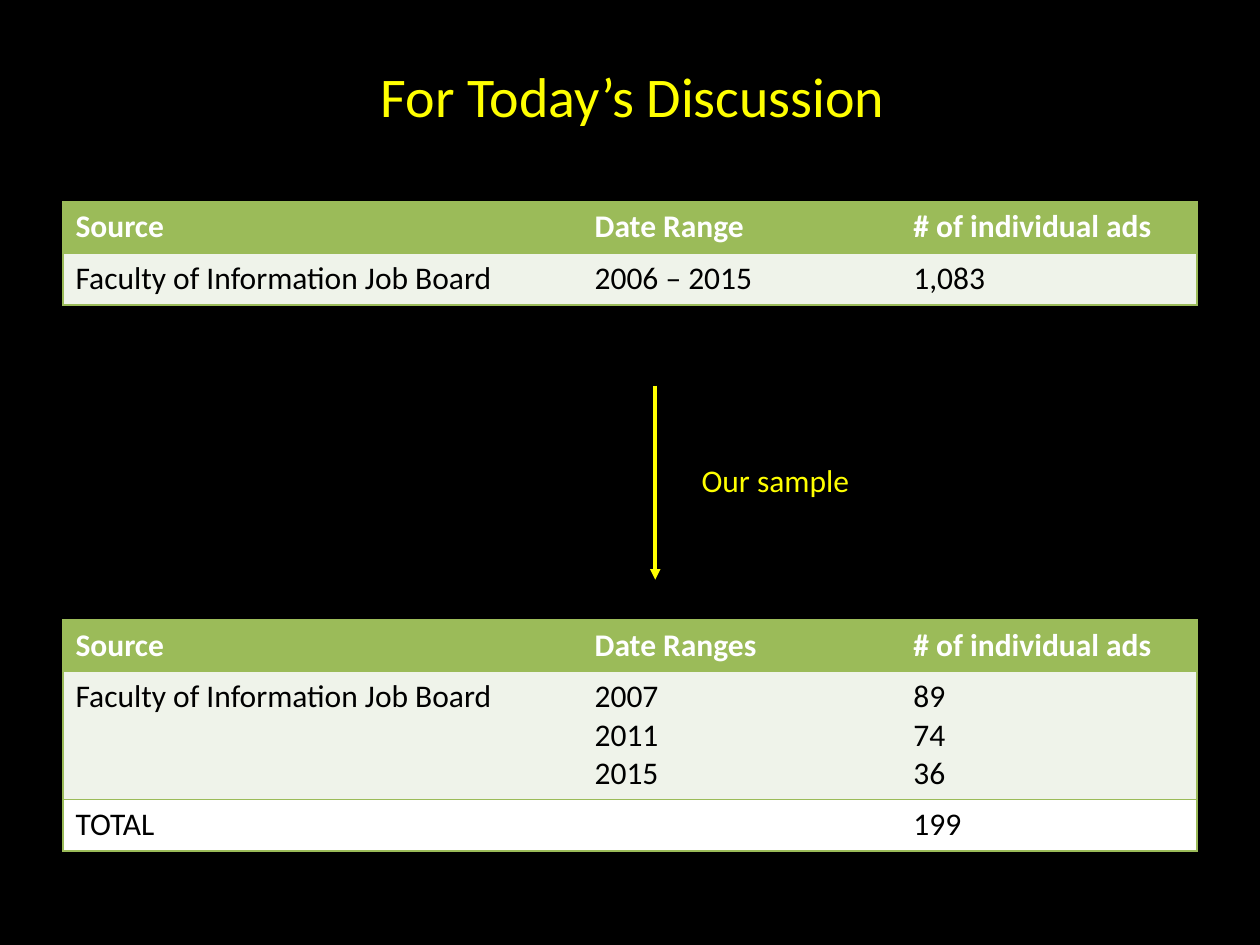
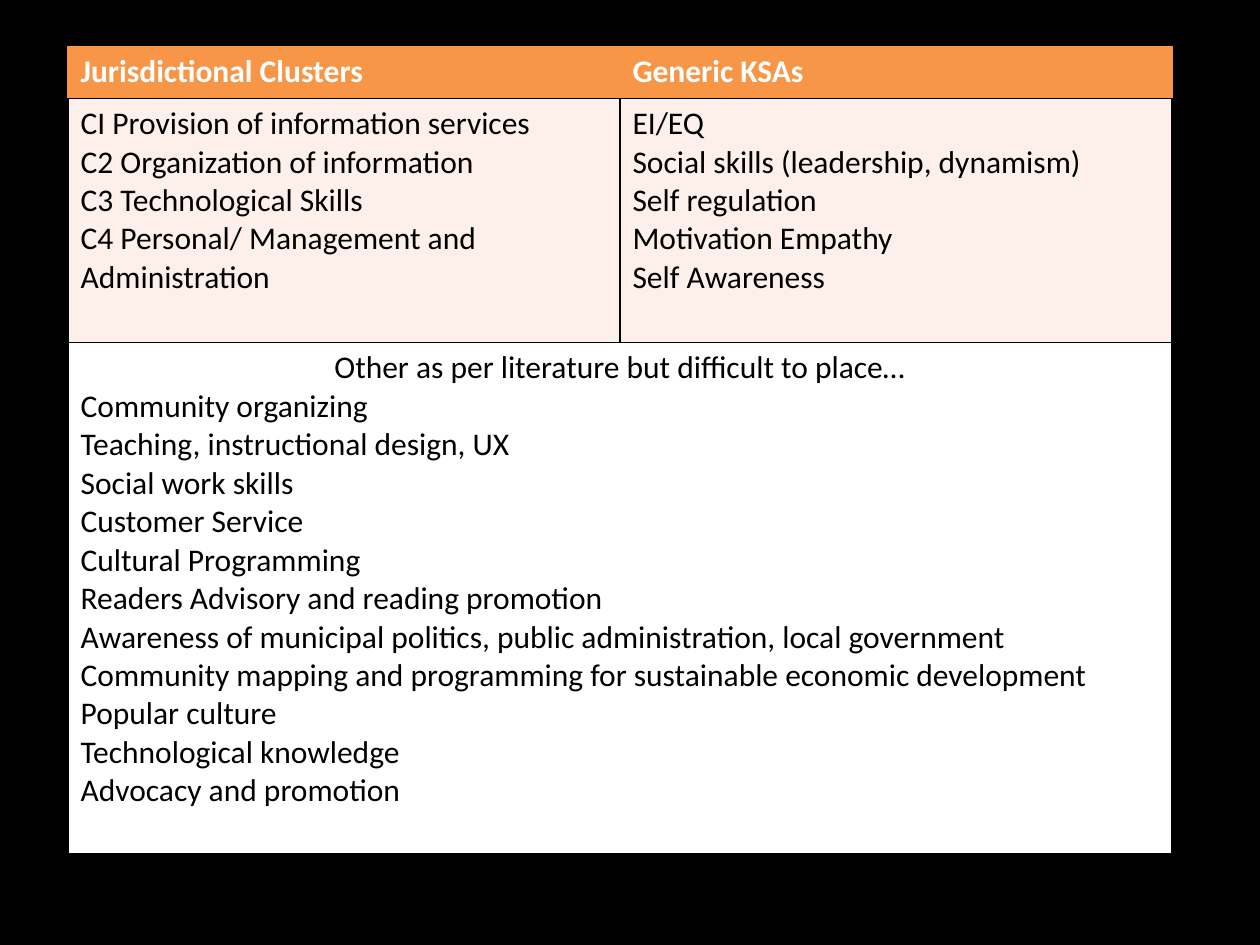
from collections import namedtuple

from lxml.etree import SubElement
from pptx import Presentation
from pptx.dml.color import RGBColor
from pptx.enum.shapes import MSO_CONNECTOR as Connector
from pptx.enum.text import MSO_ANCHOR as Anchor, MSO_AUTO_SIZE as AutoSize, PP_ALIGN as Align
from pptx.oxml.ns import qn
from pptx.util import Inches, Pt

COLORS = {
    "background": "000000",
    "accent": "FFFF00",
    "white": "FFFFFF",
    "black": "000000",
    "green": "9BBB59",
    "pale_green": "EFF3EA",
    "orange": "F79646",
    "pale_orange": "FDEFE9",
}
FONT = "Calibri"
BODY_SIZE = 18
TITLE_SIZE = 32
TITLE_ONLY, BLANK = 5, 6

Box = namedtuple("Box", "left top width height")

SOURCE_COLUMNS = [4.12, 2.53, 2.35]
ALL_ADS = [
    ["Source", "Date Range", "# of individual ads"],
    ["Faculty of Information Job Board", "2006 – 2015", "1,083"],
]
SAMPLE_ADS = [
    ["Source", "Date Ranges", "# of individual ads"],
    ["Faculty of Information Job Board", "2007\n2011\n2015", "89\n74\n36"],
    ["TOTAL", "", "199"],
]
CLUSTERS = [
    "CI Provision of information services",
    "C2 Organization of information",
    "C3 Technological Skills",
    "C4 Personal/ Management and Administration",
]
GENERIC_SKILLS = [
    "EI/EQ",
    "Social skills (leadership, dynamism)",
    "Self regulation",
    "Motivation Empathy",
    "Self Awareness",
]
OTHER_SKILLS = [
    "Other as per literature but difficult to place…",
    "Community organizing",
    "Teaching, instructional design, UX",
    "Social work skills",
    "Customer Service",
    "Cultural Programming",
    "Readers Advisory and reading promotion",
    "Awareness of municipal politics, public administration, local government",
    "Community mapping and programming for sustainable economic development",
    "Popular culture",
    "Technological knowledge",
    "Advocacy and promotion",
]
SKILLS = [
    ["Jurisdictional Clusters", "Generic KSAs"],
    ["\n".join(CLUSTERS), "\n".join(GENERIC_SKILLS)],
    ["\n".join(OTHER_SKILLS), ""],
]


def rgb(name):
    return RGBColor.from_string(COLORS[name])


def write_text(text_frame, text, color, size=BODY_SIZE, bold=False):
    text_frame.text = text
    font_format = {"name": FONT, "size": Pt(size), "bold": bold}
    for paragraph in text_frame.paragraphs:
        for run in paragraph.runs:
            for attribute, value in font_format.items():
                setattr(run.font, attribute, value)
            run.font.color.rgb = rgb(color)


def set_frame(text_frame):
    frame_format = {
        "word_wrap": True,
        "auto_size": AutoSize.NONE,
        "vertical_anchor": Anchor.TOP,
    }
    for attribute, value in frame_format.items():
        setattr(text_frame, attribute, value)


def set_borders(cell, borders):
    """Draw the sides L, R, T and B in the named colours; None hides a side."""
    properties = cell._tc.get_or_add_tcPr()
    for side in "LRTB":
        line = SubElement(properties, qn(f"a:ln{side}"), w=str(Pt(1)))
        color = borders[side]
        if color:
            fill = SubElement(line, qn("a:solidFill"))
            SubElement(fill, qn("a:srgbClr"), val=COLORS[color])
        else:
            SubElement(line, qn("a:noFill"))


def source_borders(row, column, row_count, column_count):
    """Green rules across, and green sides on the outside only."""
    return {
        "L": "green" if column == 0 else None,
        "R": "green" if column == column_count - 1 else None,
        "T": "green",
        "B": "green",
    }


def skill_borders(row, column, row_count, column_count):
    """Black grid under a header that has an orange outline."""
    if row:
        return dict.fromkeys("LRTB", "black")
    return {
        "L": "orange" if column == 0 else None,
        "R": "orange" if column == column_count - 1 else None,
        "T": "orange",
        "B": "black",
    }


def add_grid(slide, box, rows, column_widths, row_heights, row_fills, border_rule):
    """Add a table whose first row is a bold white header."""
    shape = slide.shapes.add_table(
        len(rows), len(column_widths), *(Inches(length) for length in box)
    )
    table = shape.table
    for column, width in zip(table.columns, column_widths):
        column.width = Inches(width)
    for row, height in zip(table.rows, row_heights):
        row.height = Inches(height)
    for row_index, texts in enumerate(rows):
        is_header = row_index == 0
        for column_index, text in enumerate(texts):
            cell = table.cell(row_index, column_index)
            color = "white" if is_header else "black"
            write_text(cell.text_frame, text, color, bold=is_header)
            set_borders(
                cell, border_rule(row_index, column_index, len(rows), len(texts))
            )
            cell.fill.solid()
            cell.fill.fore_color.rgb = rgb(row_fills[row_index])
    return table


def add_source_table(slide, box, rows, row_heights):
    fills = ["green", "pale_green", "white"]
    add_grid(slide, box, rows, SOURCE_COLUMNS, row_heights, fills, source_borders)


def add_title(slide, box, text):
    title = slide.shapes.title
    for side, length in box._asdict().items():
        setattr(title, side, Inches(length))
    set_frame(title.text_frame)
    write_text(title.text_frame, text, "accent", TITLE_SIZE)
    title.text_frame.paragraphs[0].alignment = Align.LEFT


def add_sample_arrow(slide, box):
    """Run an arrow down the left side of the box, with its label beside it."""
    arrow = slide.shapes.add_connector(
        Connector.STRAIGHT,
        Inches(box.left),
        Inches(box.top),
        Inches(box.left),
        Inches(box.top + box.height),
    )
    arrow.line.width = Pt(2)
    arrow.line.color.rgb = rgb("accent")
    SubElement(arrow.line._get_or_add_ln(), qn("a:tailEnd"), type="triangle")
    SubElement(arrow._element.spPr, qn("a:effectLst"))

    indent = 0.27
    label = slide.shapes.add_textbox(
        Inches(box.left + indent),
        Inches(box.top + 0.55),
        Inches(box.width - indent),
        Inches(0.4),
    )
    set_frame(label.text_frame)
    write_text(label.text_frame, "Our sample", "accent")


def build_discussion_slide(presentation):
    slide = presentation.slides.add_slide(presentation.slide_layouts[TITLE_ONLY])
    add_source_table(slide, Box(0.5, 1.6, 9, 0.82), ALL_ADS, [0.41, 0.41])
    add_source_table(slide, Box(0.5, 4.92, 9, 1.83), SAMPLE_ADS, [0.41, 1.01, 0.41])
    add_sample_arrow(slide, Box(5.2, 3.06, 2.39, 1.54))
    add_title(slide, Box(2.92, 0.44, 4.31, 0.64), "For Today’s Discussion")


def build_skills_slide(presentation):
    slide = presentation.slides.add_slide(presentation.slide_layouts[BLANK])
    table = add_grid(
        slide,
        Box(0.54, 0.37, 8.76, 6.41),
        SKILLS,
        [4.38, 4.38],
        [0.41, 1.94, 4.06],
        ["orange", "pale_orange", "white"],
        skill_borders,
    )
    other = table.cell(2, 0)
    other.merge(table.cell(2, 1))
    other.text_frame.paragraphs[0].alignment = Align.CENTER


def main():
    presentation = Presentation()
    presentation.slide_width = Inches(10)
    presentation.slide_height = Inches(7.5)
    background = presentation.slide_master.background.fill
    background.solid()
    background.fore_color.rgb = rgb("background")
    build_discussion_slide(presentation)
    build_skills_slide(presentation)
    presentation.save("out.pptx")


if __name__ == "__main__":
    main()
